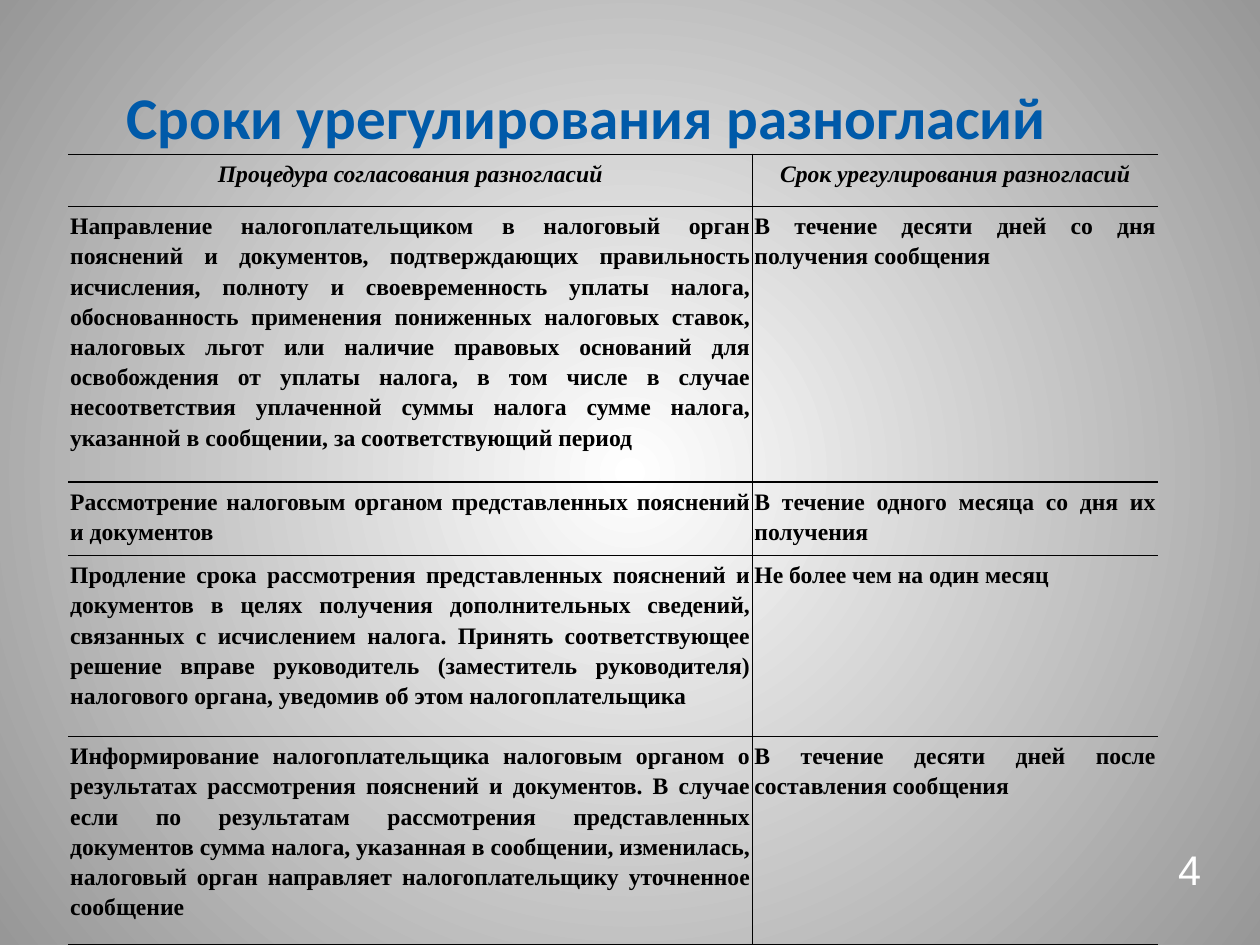
import pptx
import pptx.util
import pptx.dml.color
import pptx.enum.text
import pptx.oxml
import pptx.oxml.ns

Inches, Pt = pptx.util.Inches, pptx.util.Pt
ALIGN = pptx.enum.text.PP_ALIGN
MIDDLE = pptx.enum.text.MSO_ANCHOR.MIDDLE
NS = pptx.oxml.ns.nsdecls("a")

TITLE = "Сроки урегулирования разногласий"
HEAD = ("Процедура согласования разногласий", "Срок урегулирования разногласий")
STEPS = [
    ("Направление налогоплательщиком в налоговый орган пояснений и документов, "
     "подтверждающих правильность исчисления, полноту и своевременность уплаты налога, "
     "обоснованность применения пониженных налоговых ставок, налоговых льгот или наличие "
     "правовых оснований для освобождения от уплаты налога, в том числе в случае "
     "несоответствия уплаченной суммы налога сумме налога, указанной в сообщении, "
     "за соответствующий период",
     "В течение десяти дней со дня получения сообщения"),
    ("Рассмотрение налоговым органом представленных пояснений и документов",
     "В течение одного месяца со дня их получения"),
    ("Продление срока рассмотрения представленных пояснений и документов в целях получения "
     "дополнительных сведений, связанных с исчислением налога. Принять соответствующее "
     "решение вправе руководитель (заместитель руководителя) налогового органа, уведомив "
     "об этом налогоплательщика",
     "Не более чем на один месяц"),
    ("Информирование налогоплательщика налоговым органом о результатах рассмотрения "
     "пояснений и документов. В случае если по результатам рассмотрения представленных "
     "документов сумма налога, указанная в сообщении, изменилась, налоговый орган "
     "направляет налогоплательщику уточненное сообщение",
     "В течение десяти дней после составления сообщения"),
]
WIDTHS = (6.43, 3.81)
HEIGHTS = (0.49, 2.59, 0.69, 1.7, 1.96)


def color(code):
    return pptx.dml.color.RGBColor.from_string(code)


def write(frame, text, size=16, face="Times New Roman", ink="000000", bold=False,
          italic=False, align=ALIGN.LEFT, line=None):
    frame.word_wrap = True
    para = frame.paragraphs[0]
    para.alignment = align
    if line:
        para.line_spacing = line
    run = para.add_run()
    run.text = text
    font = run.font
    font.size, font.name = Pt(size), face
    font.bold, font.italic = bold, italic
    font.color.rgb = color(ink)


def label(slide, box, text, **style):
    frame = slide.shapes.add_textbox(*map(Inches, box)).text_frame
    frame.vertical_anchor = MIDDLE
    frame.margin_left = frame.margin_right = Inches(0.12)
    frame.margin_top = frame.margin_bottom = Inches(0.06)
    write(frame, text, **style)


def border(cell, sides):
    # Only the named sides get a line
    props = cell._tc.get_or_add_tcPr()
    for side in "LRTB":
        fill = '<a:solidFill><a:srgbClr val="000000"/></a:solidFill>'
        if side not in sides:
            fill = "<a:noFill/>"
        props.append(pptx.oxml.parse_xml(
            f'<a:ln{side} {NS} w="{Pt(1)}">{fill}</a:ln{side}>'))


def backdrop(slide):
    # Radial gradient from the centre
    fill = slide.background.fill
    fill.gradient()
    for stop, place, code in zip(fill.gradient_stops, (0, 1), ("FFFFFF", "979797")):
        stop.position = place
        stop.color.rgb = color(code)
    grad = slide.element.find(".//" + pptx.oxml.ns.qn("a:gradFill"))
    grad.remove(grad.find(pptx.oxml.ns.qn("a:lin")))
    grad.append(pptx.oxml.parse_xml(
        f'<a:path {NS} path="circle">'
        '<a:fillToRect l="50000" t="50000" r="50000" b="50000"/></a:path>'))


def terms(slide, box):
    # Table of procedures and their time limits
    rows = [HEAD] + STEPS
    grid = slide.shapes.add_table(len(rows), len(HEAD), *map(Inches, box)).table
    grid.first_row = grid.horz_banding = False
    for col, width in zip(grid.columns, WIDTHS):
        col.width = Inches(width)
    for row, height, texts in zip(grid.rows, HEIGHTS, rows):
        row.height = Inches(height)
        top = texts is HEAD
        for cell, text, sides in zip(row.cells, texts, ("RTB", "LTB")):
            border(cell, sides)
            cell.fill.background()
            cell.margin_left = cell.margin_right = Inches(0.02)
            cell.margin_top = cell.margin_bottom = Inches(0.03)
            write(cell.text_frame, text, bold=True, italic=top, line=1.15,
                  align=ALIGN.CENTER if top else ALIGN.JUSTIFY)


def main():
    deck = pptx.Presentation()
    deck.slide_width, deck.slide_height = Inches(11.84), Inches(8.88)
    slide = deck.slides.add_slide(deck.slide_layouts[6])
    backdrop(slide)
    terms(slide, (0.64, 1.45, sum(WIDTHS), sum(HEIGHTS)))
    # Title and page number
    label(slide, (1.07, 0.65, 9.5, 0.88), TITLE, size=40, face="Calibri",
          ink="005AA9", bold=True)
    label(slide, (10.78, 7.82, 0.8, 0.82), "4", size=28, face="Arial",
          ink="FFFFFF", align=ALIGN.CENTER, line=Pt(24.9))
    deck.save("out.pptx")


if __name__ == "__main__":
    main()
